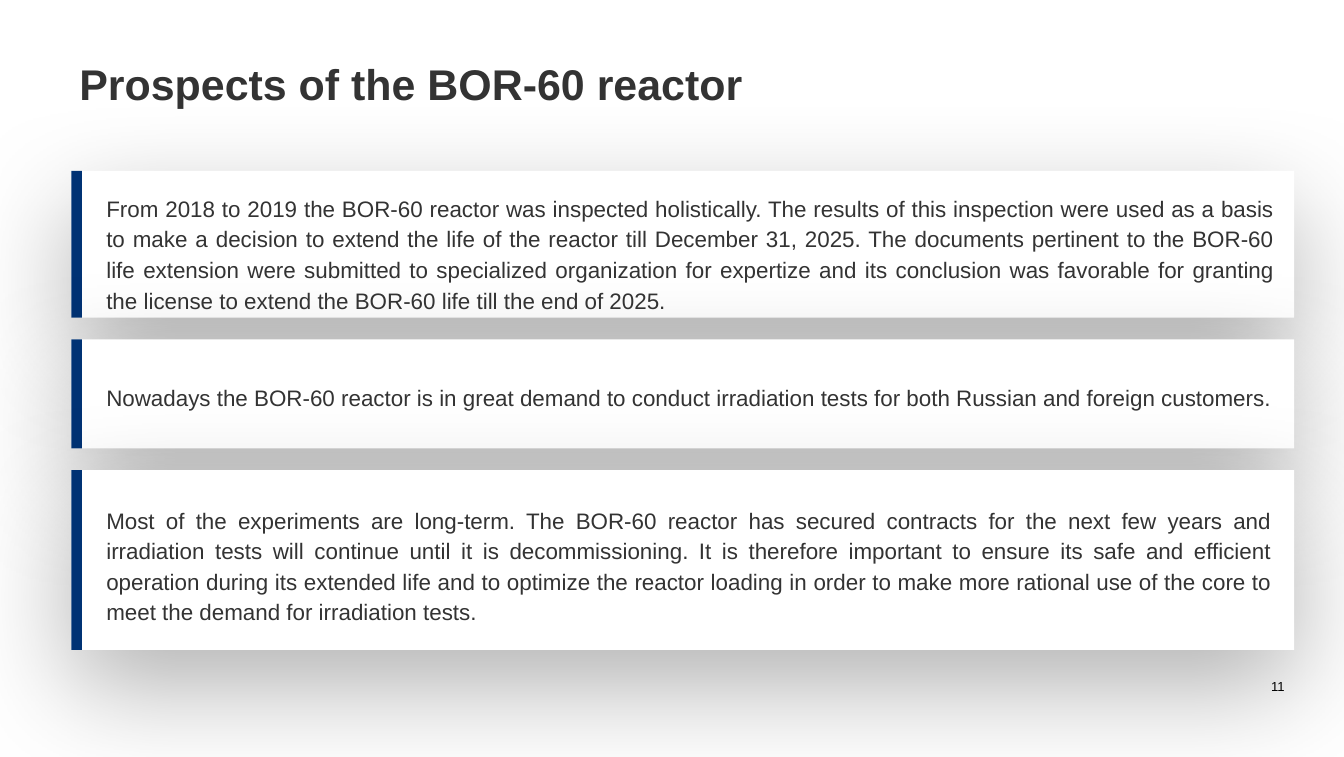
from lxml import etree
from pptx import Presentation
from pptx.dml.color import RGBColor
from pptx.enum.shapes import MSO_SHAPE
from pptx.enum.text import MSO_ANCHOR, PP_ALIGN
from pptx.oxml.ns import qn
from pptx.util import Cm, Pt

RECTANGLE = MSO_SHAPE.RECTANGLE
TOP, BOTTOM = MSO_ANCHOR.TOP, MSO_ANCHOR.BOTTOM
LEFT, RIGHT, JUSTIFY = PP_ALIGN.LEFT, PP_ALIGN.RIGHT, PP_ALIGN.JUSTIFY
COLORS = {"card": "FFFFFF", "accent": "003274", "text": "333333",
          "number": "000000", "shadow": "000000"}

deck = Presentation()
deck.slide_width, deck.slide_height = Cm(25.4), Cm(14.3)
page = deck.slides.add_slide(deck.slide_layouts[6])


def add_bar(group, left, top, width, height, color):
    bar = group.shapes.add_shape(RECTANGLE, Cm(left), Cm(top), Cm(width), Cm(height))
    bar.shadow.inherit = False
    bar.fill.solid()
    bar.fill.fore_color.rgb = RGBColor.from_string(COLORS[color])
    bar.line.fill.background()
    return bar


def add_text(text, left, top, width, height, size, color="text",
             align=LEFT, anchor=TOP, bold=False, spacing=1.0):
    box = page.shapes.add_textbox(Cm(left), Cm(top), Cm(width), Cm(height))
    frame = box.text_frame
    frame.word_wrap = True
    frame.vertical_anchor = anchor
    frame.margin_left = frame.margin_top = frame.margin_right = frame.margin_bottom = 0
    para = frame.paragraphs[0]
    para.text = text
    para.alignment = align
    para.line_spacing = spacing
    para.font.name = "Arial"
    para.font.size = Pt(size)
    para.font.bold = bold
    para.font.color.rgb = RGBColor.from_string(COLORS[color])


# Page number and title
add_text("11", 22.73, 12.73, 1.55, 0.38, 7, "number", RIGHT, BOTTOM)
add_text("Prospects of the BOR-60 reactor", 1.5, 1.19, 18.24, 0.91, 23,
         bold=True, spacing=0.9)

# Cards: height, then top, width and height of the text, and the text
CARDS = [
    (2.77, 3.61, 22.1, 2.16,
     "From 2018 to 2019 the BOR-60 reactor was inspected holistically. The results of "
     "this inspection were used as a basis to make a decision to extend the life of the "
     "reactor till December 31, 2025. The documents pertinent to the BOR-60 life extension "
     "were submitted to specialized organization for expertize and its conclusion was "
     "favorable for granting the license to extend the BOR-60 life till the end of 2025."),
    (2.06, 7.19, 22.81, 0.51,
     "Nowadays the BOR-60 reactor is in great demand to conduct irradiation tests for both "
     "Russian and foreign customers."),
    (3.4, 9.5, 22.05, 2.16,
     "Most of the experiments are long-term. The BOR-60 reactor has secured contracts for "
     "the next few years and irradiation tests will continue until it is decommissioning. "
     "It is therefore important to ensure its safe and efficient operation during its "
     "extended life and to optimize the reactor loading in order to make more rational use "
     "of the core to meet the demand for irradiation tests."),
]
CARD_LEFT, CARD_WIDTH, ACCENT_WIDTH, GAP = 1.35, 23.11, 0.2, 0.41

# Card backgrounds with a soft shadow and an accent bar
card_top = 3.23
for card_height, *_ in CARDS:
    group = page.shapes.add_group_shape()
    card = add_bar(group, CARD_LEFT, card_top, CARD_WIDTH, card_height, "card")
    effects = card._element.spPr.find(qn("a:effectLst"))
    shadow = etree.SubElement(effects, qn("a:outerShdw"), blurRad=str(Pt(60)),
                              dist=str(Pt(20)), dir="5400000", rotWithShape="0")
    tint = etree.SubElement(shadow, qn("a:srgbClr"), val=COLORS["shadow"])
    etree.SubElement(tint, qn("a:alpha"), val="30000")
    add_bar(group, CARD_LEFT, card_top, ACCENT_WIDTH, card_height, "accent")
    card_top += card_height + GAP

# Card texts
for _, text_top, text_width, text_height, text in CARDS:
    add_text(text, 2.01, text_top, text_width, text_height, 12,
             align=JUSTIFY, spacing=1.14)

deck.save("out.pptx")
